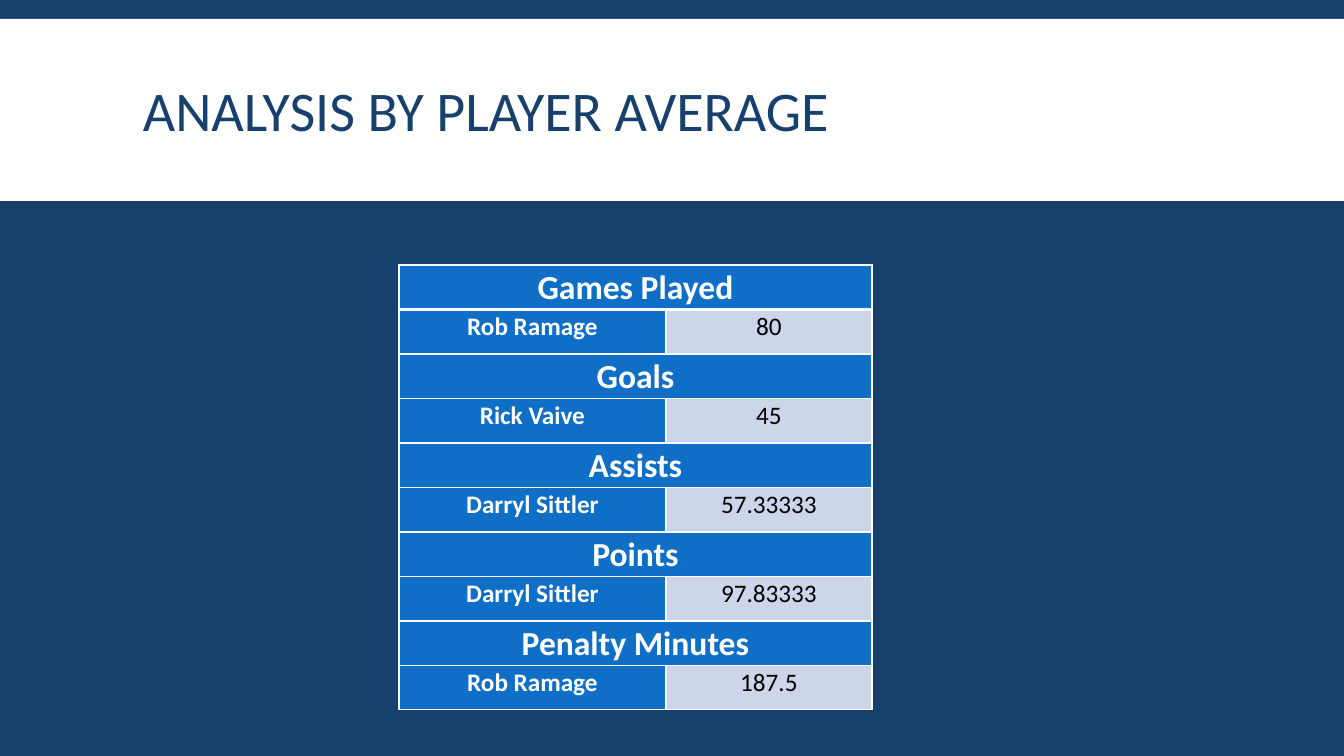
"""Builds the slide with the leading player averages per statistic."""
from lxml.etree import SubElement
from pptx import Presentation
from pptx.dml.color import RGBColor
from pptx.enum.shapes import MSO_SHAPE as Shape
from pptx.enum.text import MSO_ANCHOR as Anchor, PP_ALIGN as Align
from pptx.oxml.ns import qn
from pptx.util import Emu, Pt

COLORS = {"navy": "17406D", "blue": "0F6FC6", "pale": "CCD5EA", "white": "FFFFFF", "black": "000000"}
LEADERS = [
    ("Games Played", "Rob Ramage", "80"),
    ("Goals", "Rick Vaive", "45"),
    ("Assists", "Darryl Sittler", "57.33333"),
    ("Points", "Darryl Sittler", "97.83333"),
    ("Penalty Minutes", "Rob Ramage", "187.5"),
]


def px(length):
    return Emu(round(length * 914400 / 100.8))


def write(text_frame, text, size, color, bold, spacing):
    text_frame.text = text
    paragraph = text_frame.paragraphs[0]
    paragraph.line_spacing = spacing
    font = paragraph.runs[0].font
    font.name, font.size, font.bold = "Calibri", Pt(size), bold
    font.color.rgb = RGBColor.from_string(COLORS[color])
    return paragraph


presentation = Presentation()
presentation.slide_width, presentation.slide_height = px(1344), px(756)
slide = presentation.slides.add_slide(presentation.slide_layouts[6])
slide.background.fill.solid()
slide.background.fill.fore_color.rgb = RGBColor.from_string(COLORS["navy"])

band = slide.shapes.add_shape(Shape.RECTANGLE, 0, px(19), px(1344), px(182))
band.shadow.inherit = False
band.fill.solid()
band.fill.fore_color.rgb = RGBColor.from_string(COLORS["white"])
band.line.fill.background()

title = slide.shapes.add_textbox(px(133), px(31), px(1079), px(166)).text_frame
title.word_wrap = True
title.vertical_anchor = Anchor.MIDDLE
write(title, "ANALYSIS BY PLAYER AVERAGE", 40, "navy", False, 0.85)

row_count = 2 * len(LEADERS)
table = slide.shapes.add_table(row_count, 2, px(399), px(265), px(473), px(445)).table
table.columns[0].width, table.columns[1].width = px(267), px(206)
for row in table.rows:
    row.height = px(445) // row_count

for index, (statistic, player, average) in enumerate(LEADERS):
    heading_row, player_row = 2 * index, 2 * index + 1
    table.cell(heading_row, 0).merge(table.cell(heading_row, 1))
    entries = [
        (heading_row, 0, statistic, 24, "white", "blue"),
        (player_row, 0, player, 18, "white", "blue"),
        (player_row, 1, average, 18, "black", "pale"),
    ]
    for row, column, text, size, color, fill in entries:
        cell = table.cell(row, column)
        paragraph = write(cell.text_frame, text, size, color, color == "white", 1.07)
        paragraph.alignment = Align.CENTER
        cell.margin_left = cell.margin_right = px(7)
        cell.margin_top = cell.margin_bottom = 0
        cell.fill.solid()
        cell.fill.fore_color.rgb = RGBColor.from_string(COLORS[fill])

for row in range(row_count):
    for column in range(2):
        properties = table.cell(row, column)._tc.get_or_add_tcPr()
        for position, side in enumerate("LRTB"):
            thick = (row, side) in ((0, "B"), (1, "T"))
            line = SubElement(properties, qn(f"a:ln{side}"), w=str(Pt(3 if thick else 1)))
            SubElement(SubElement(line, qn("a:solidFill")), qn("a:srgbClr"), val=COLORS["white"])
            properties.insert(position, line)

presentation.save("out.pptx")
